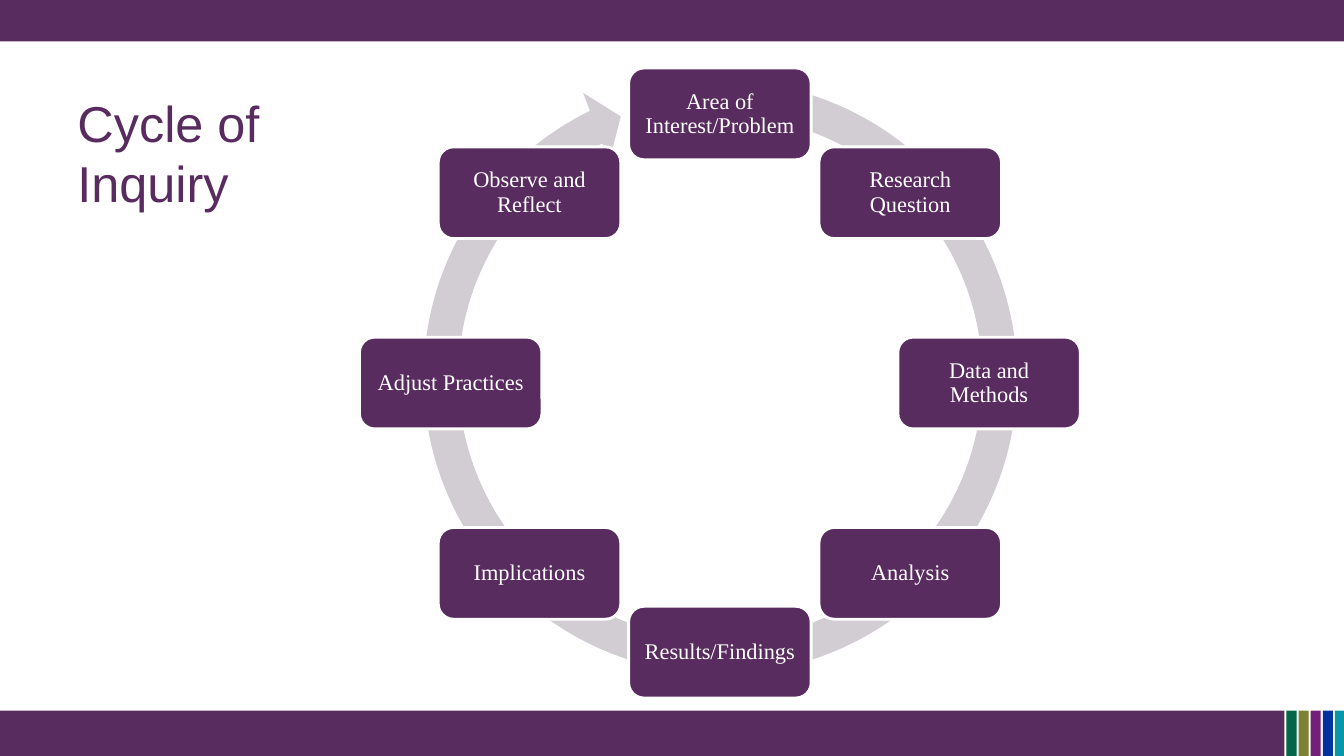
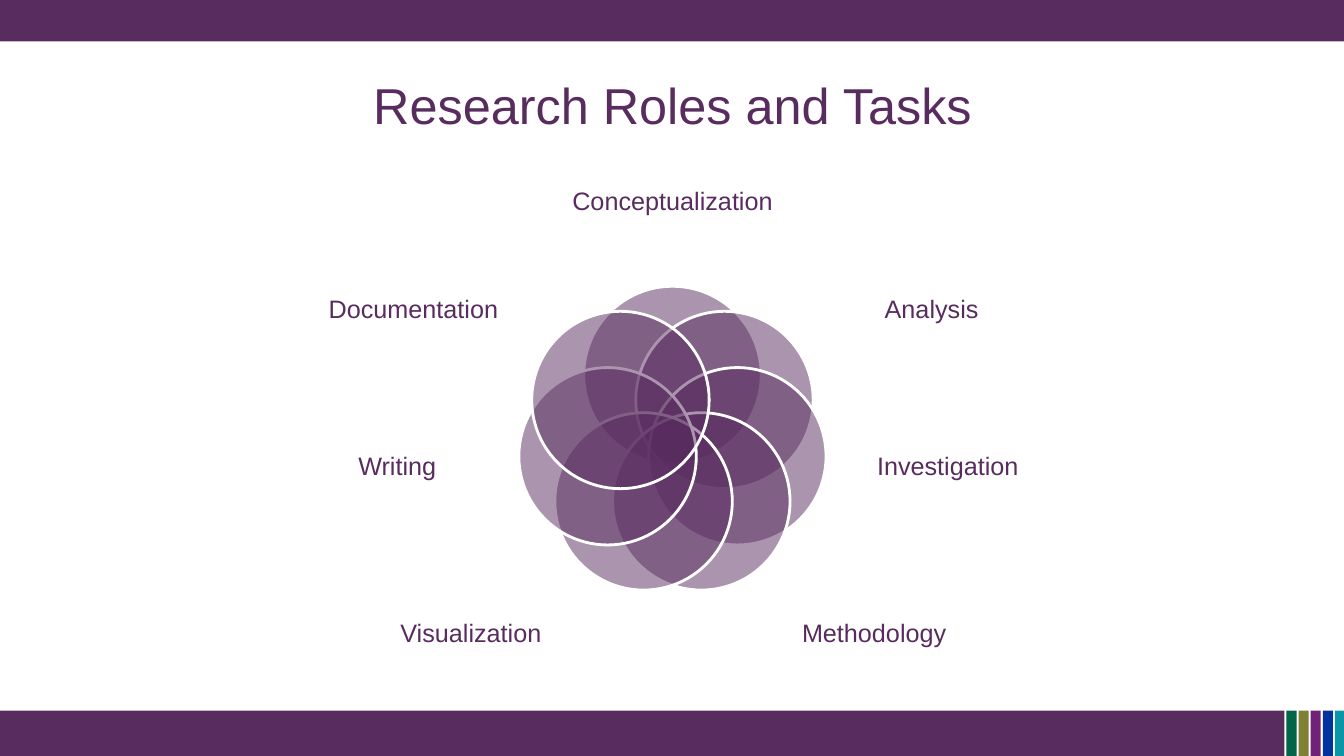
"""Build two slides: the cycle of inquiry and the research roles and tasks."""
import math

import lxml.etree
import pptx
import pptx.dml.color
import pptx.enum.shapes
import pptx.enum.text
import pptx.oxml.ns
import pptx.util

Inches, Pt = pptx.util.Inches, pptx.util.Pt
SHAPE = pptx.enum.shapes.MSO_SHAPE
ALIGN = pptx.enum.text.PP_ALIGN
COLORS = {
    "plum": "592C5F", "white": "FFFFFF", "ring": "D1CDD2", "green": "006647",
    "olive": "7E8034", "violet": "712177", "blue": "0033A0", "teal": "0996A9",
}
RGB = {name: pptx.dml.color.RGBColor.from_string(code) for name, code in COLORS.items()}


def add_figure(slide, kind, left, top, width, height, fill, outlined=False):
    figure = slide.shapes.add_shape(kind, Inches(left), Inches(top), Inches(width), Inches(height))
    figure.shadow.inherit = False
    figure.fill.solid()
    figure.fill.fore_color.rgb = RGB[fill]
    if outlined:
        figure.line.color.rgb = RGB["white"]
        figure.line.width = Pt(2)
    else:
        figure.line.fill.background()
    return figure


def write(frame, text, size, font, color, align, margin, spacing):
    frame.word_wrap = True
    frame.vertical_anchor = pptx.enum.text.MSO_ANCHOR.MIDDLE
    if margin is not None:
        frame.margin_left = frame.margin_right = Inches(margin)
        frame.margin_top = frame.margin_bottom = Inches(margin)
    paragraph = frame.paragraphs[0]
    paragraph.text = text
    paragraph.alignment = align
    paragraph.line_spacing = spacing
    paragraph.font.size = Pt(size)
    paragraph.font.name = font
    paragraph.font.color.rgb = RGB[color]


prs = pptx.Presentation()
prs.slide_width, prs.slide_height = Inches(13.33), Inches(7.5)

titles = [
    ("Cycle of Inquiry", 2.64, 2.2, ALIGN.LEFT),
    ("Research Roles and Tasks", 12, 1.25, ALIGN.CENTER),
]
slides = []
for title, width, height, align in titles:
    slide = prs.slides.add_slide(prs.slide_layouts[6])
    add_figure(slide, SHAPE.RECTANGLE, 0, 0, 13.33, 0.41, "plum")
    add_figure(slide, SHAPE.RECTANGLE, 0, 7.05, 12.74, 0.45, "plum")
    for i, stripe in enumerate(["green", "olive", "violet", "blue", "teal"]):
        add_figure(slide, SHAPE.RECTANGLE, 12.76 + 0.12 * i, 7.05, 0.1, 0.45, stripe)
    heading = slide.shapes.add_textbox(Inches(0.67), Inches(0.41), Inches(width), Inches(height))
    write(heading.text_frame, title, 36, "Arial", "plum", align, None, None)
    slides.append(slide)
cycle_slide, roles_slide = slides

cycle_x, cycle_y, cycle_radius = 7.14, 3.8, 2.67
ring_size = 6.27
ring = add_figure(cycle_slide, SHAPE.CIRCULAR_ARROW, 4.01, 0.61, ring_size, ring_size, "ring")
for i, value in enumerate([0.055, 3.307, 146.174, 168.923, 0.058]):
    ring.adjustments[i] = value

steps = [
    "Area of Interest/Problem", "Research Question", "Data and Methods", "Analysis",
    "Results/Findings", "Implications", "Adjust Practices", "Observe and Reflect",
]
step_width, step_height = 1.81, 0.91
for i, step in enumerate(steps):
    angle = math.tau * i / len(steps)
    left = cycle_x + cycle_radius * math.sin(angle) - step_width / 2
    top = cycle_y - cycle_radius * math.cos(angle) - step_height / 2
    box = add_figure(cycle_slide, SHAPE.ROUNDED_RECTANGLE, left, top,
                     step_width, step_height, "plum", outlined=True)
    write(box.text_frame, step, 16, "Times New Roman", "white", ALIGN.CENTER, 0.07, 0.9)

roles_x, roles_y, petal_radius, petal_size = 6.67, 4.38, 0.66, 1.76
label_width, label_height = 2.02, 1.2
roles = [
    ("Conceptualization", 0, 2.01), ("Analysis", 2.57, 3.08),
    ("Investigation", 2.73, 4.64), ("Methodology", 2, 6.29),
    ("Visualization", -2, 6.29), ("Writing", -2.73, 4.64),
    ("Documentation", -2.57, 3.08),
]
for i, (role, offset, label_y) in enumerate(roles):
    angle = math.tau * i / len(roles)
    left = roles_x + petal_radius * math.sin(angle) - petal_size / 2
    top = roles_y - petal_radius * math.cos(angle) - petal_size / 2
    petal = add_figure(roles_slide, SHAPE.OVAL, left, top,
                       petal_size, petal_size, "plum", outlined=True)
    fill_color = petal.fill._xPr.find(pptx.oxml.ns.qn("a:solidFill"))[0]
    lxml.etree.SubElement(fill_color, pptx.oxml.ns.qn("a:alpha"), val="50000")
    label = roles_slide.shapes.add_textbox(
        Inches(roles_x + offset - label_width / 2), Inches(label_y - label_height / 2),
        Inches(label_width), Inches(label_height))
    write(label.text_frame, role, 18, "Arial", "plum", ALIGN.CENTER, 0, 0.9)

prs.save("out.pptx")
